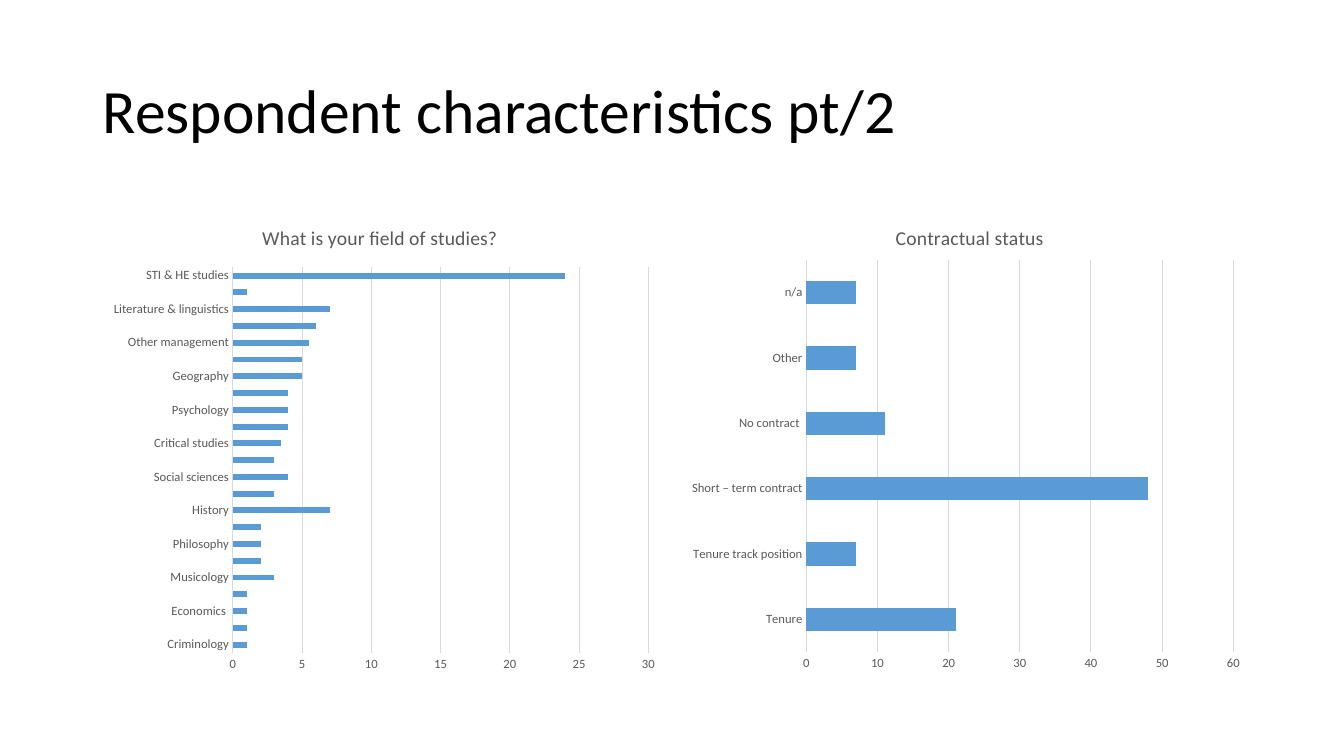
from lxml.etree import SubElement
from pptx import Presentation
from pptx.chart.data import CategoryChartData
from pptx.dml.color import RGBColor
from pptx.enum.chart import XL_CHART_TYPE as ChartType, XL_TICK_MARK as Tick
from pptx.enum.text import MSO_ANCHOR as Anchor
from pptx.oxml.ns import qn
from pptx.util import Inches, Pt

FIELDS = {
    "Criminology": 1, "Food/ agriculture": 1, "Economics ": 1, "Humanities": 1,
    "Musicology": 3, "Art History": 2, "Philosophy": 2,
    "Ethnolgraphy/ anthropology": 2, "History": 7, "Education": 3,
    "Social sciences": 4, "Information sciences": 3, "Critical studies": 3.5,
    "Law": 4, "Psychology": 4, "Politics": 4, "Geography": 5,
    "Cultural Studies": 5, "Other management": 5.5, "Sociology": 6,
    "Literature & linguistics": 7, "ICT": 1, "STI & HE studies": 24,
}
CONTRACTS = {
    "Tenure": 21, "Tenure track position": 7, "Short – term contract": 48,
    "No contract ": 11, "Other": 7, "n/a": 7,
}


def color(hex_code):
    return RGBColor.from_string(hex_code)


class SlideBuilder:
    FONT = "Calibri"
    BLACK, GREY, GRID, BLUE = "000000", "595959", "D9D9D9", "5B9BD5"

    def __init__(self, slide):
        self.slide = slide

    def style_font(self, font, size, hex_code):
        font.name, font.size, font.bold = self.FONT, Pt(size), False
        font.color.rgb = color(hex_code)

    def style_line(self, line):
        line.color.rgb = color(self.GRID)
        line.width = Pt(0.75)

    def place(self, parent, **values):
        """Write a manual chart layout from fractions of the chart area."""
        layout = parent.find(qn("c:layout"))
        if layout is None:
            layout = SubElement(parent, qn("c:layout"))
            anchor = parent.find(qn("c:tx"))
            if anchor is not None:
                anchor.addnext(layout)
            else:
                parent.insert(0, layout)
        manual = SubElement(layout, qn("c:manualLayout"))
        for tag, value in values.items():
            SubElement(manual, qn(f"c:{tag}")).set("val", str(value))

    def heading(self, text, left, top, width, height):
        box = self.slide.shapes.add_textbox(
            Inches(left), Inches(top), Inches(width), Inches(height))
        frame = box.text_frame
        frame.word_wrap = True
        frame.vertical_anchor = Anchor.MIDDLE
        paragraph = frame.paragraphs[0]
        paragraph.line_spacing = 0.9
        run = paragraph.add_run()
        run.text = text
        self.style_font(run.font, 44, self.BLACK)

    def bar_chart(self, title, answers, left, title_x, plot):
        data = CategoryChartData()
        data.categories = list(answers)
        data.add_series("Series 1", list(answers.values()))
        chart = self.slide.shapes.add_chart(
            ChartType.BAR_CLUSTERED, Inches(left), Inches(2),
            Inches(5.67), Inches(4.76), data).chart
        chart.has_legend = False
        self.style_font(chart.font, 10, self.BLACK)

        # Chart title
        chart.has_title = True
        run = chart.chart_title.text_frame.paragraphs[0].add_run()
        run.text = title
        self.style_font(run.font, 14, self.GREY)
        self.place(chart.chart_title._element, xMode="edge", yMode="edge",
                   x=title_x, y=0.04)

        # Bars
        bars = chart.plots[0]
        bars.gap_width = 182
        bars.vary_by_categories = False
        fill = bars.series[0].format.fill
        fill.solid()
        fill.fore_color.rgb = color(self.BLUE)
        x, y, w, h = plot
        self.place(chart._chartSpace.chart.plotArea, layoutTarget="inner",
                   xMode="edge", yMode="edge", x=x, y=y, w=w, h=h)

        # Axes
        for axis in (chart.category_axis, chart.value_axis):
            axis.major_tick_mark = axis.minor_tick_mark = Tick.NONE
            self.style_font(axis.tick_labels.font, 9, self.GREY)
        self.style_line(chart.category_axis.format.line)
        chart.value_axis.format.line.fill.background()
        chart.value_axis.has_major_gridlines = True
        self.style_line(chart.value_axis.major_gridlines.format.line)


def main():
    deck = Presentation()
    deck.slide_width, deck.slide_height = Inches(13.33), Inches(7.5)
    builder = SlideBuilder(deck.slides.add_slide(deck.slide_layouts[6]))

    builder.heading("Respondent characteristics pt/2", 0.92, 0.4, 11.5, 1.45)
    builder.bar_chart("What is your field of studies?", FIELDS, left=0.92,
                      title_x=0.29, plot=(0.245, 0.137, 0.727, 0.804))
    builder.bar_chart("Contractual status", CONTRACTS, left=6.75,
                      title_x=0.37, plot=(0.22, 0.122, 0.747, 0.817))

    deck.save("out.pptx")


if __name__ == "__main__":
    main()
